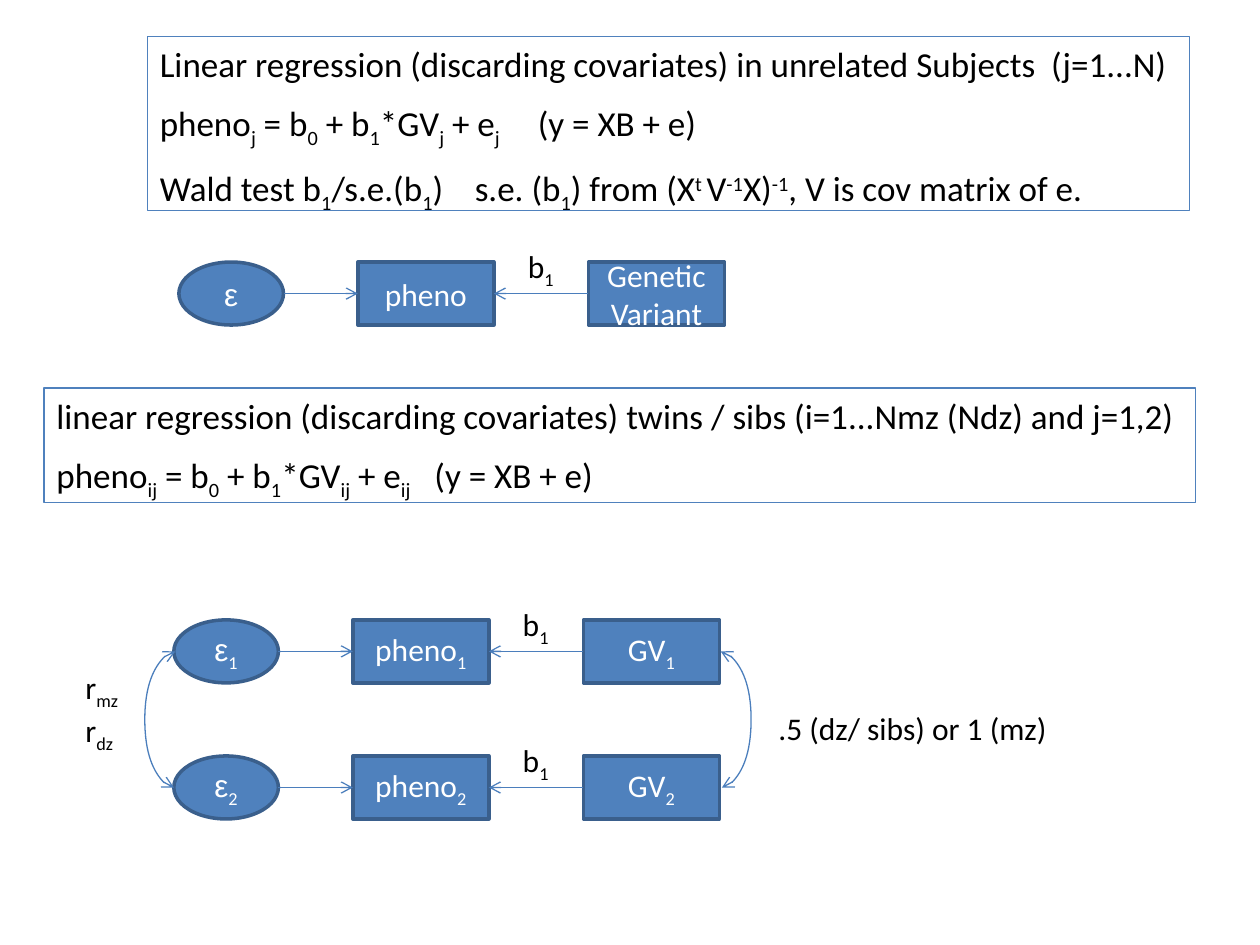
from lxml.etree import SubElement
from pptx import Presentation
from pptx.dml.color import RGBColor
from pptx.enum.shapes import MSO_CONNECTOR as Link, MSO_SHAPE as Kind
from pptx.enum.text import MSO_ANCHOR as Anchor, MSO_AUTO_SIZE as Auto, PP_ALIGN as Align
from pptx.oxml.ns import qn
from pptx.util import Inches, Pt

# {_x} is a subscript, {^x} a superscript
MODELS = [
    ((1.17, 0.29, 8.27, 1.38), [
        "Linear regression (discarding covariates) in unrelated Subjects  (j=1...N)",
        "pheno{_j} = b{_0} + b{_1}*GV{_j} + e{_j}\t(y = XB + e)",
        "Wald test b{_1}/s.e.(b{_1})\ts.e. (b{_1}) from (X{^t }V{^-1}X){^-1}, V is cov matrix of e.",
    ]),
    ((0.35, 3.08, 9.14, 0.91), [
        "linear regression (discarding covariates) twins / sibs (i=1...Nmz (Ndz) and j=1,2)",
        "pheno{_ij} = b{_0} + b{_1}*GV{_ij} + e{_ij}\t(y = XB + e)",
    ]),
]
# left, top, error, phenotype, variant
PATHS = [
    (1.42, 2.08, "ε", "pheno", "Genetic\nVariant"),
    (1.38, 4.92, "ε{_1}", "pheno{_1}", "GV{_1}"),
    (1.38, 6.0, "ε{_2}", "pheno{_2}", "GV{_2}"),
]
LABELS = [
    ((0.58, 5.25, 0.49, 0.71), "r{_mz}\nr{_dz}"),
    ((6.08, 5.58, 2.36, 0.4), ".5 (dz/ sibs) or 1 (mz)"),
]
OVAL_W, BOX_W, NODE_H = 0.83, 1.08, 0.5
PHENO_DX, GENE_DX = 1.42, 3.25
BASE = {"_": "-25000", "^": "30000"}
FILL, EDGE, ARROW = "4F81BD", "3A5F8C", "4B7EBC"

deck = Presentation()
deck.slide_width, deck.slide_height = Inches(10), Inches(7.5)
slide = deck.slides.add_slide(deck.slide_layouts[6])
shapes = slide.shapes


def rgb(code):
    return RGBColor.from_string(code)


def write(shape, lines, size=18, color="000000", align=Align.LEFT,
          anchor=Anchor.TOP, wrap=True, gap=0):
    frame = shape.text_frame
    frame.word_wrap, frame.vertical_anchor = wrap, anchor
    frame.auto_size = Auto.NONE if wrap else Auto.SHAPE_TO_FIT_TEXT
    for i, line in enumerate(lines):
        para = frame.add_paragraph() if i else frame.paragraphs[0]
        para.alignment = align
        para.space_before = Pt(gap if i else 0)
        for k, part in enumerate(line.replace("}", "{").split("{")):
            if not part:
                continue
            run = para.add_run()
            run.text = part[1:] if k % 2 else part
            run.font.size = Pt(size)
            run.font.name = "Arial" if part == "ε" else "Calibri"
            run.font.color.rgb = rgb(color)
            if k % 2:
                run._r.get_or_add_rPr().set("baseline", BASE[part[0]])


def shape(kind, place, fill, edge, width):
    item = shapes.add_shape(kind, *map(Inches, place))
    item.shadow.inherit = False
    if fill:
        item.fill.solid()
        item.fill.fore_color.rgb = rgb(fill)
    else:
        item.fill.background()
    item.line.color.rgb = rgb(edge)
    item.line.width = Pt(width)
    return item


def node(kind, x, y, width, text):
    item = shape(kind, (x, y, width, NODE_H), FILL, EDGE, 2)
    write(item, text.split("\n"), color="FFFFFF", align=Align.CENTER, anchor=Anchor.MIDDLE)


def label(place, text):
    write(shapes.add_textbox(*map(Inches, place)), text.split("\n"), wrap=False)


def arrow(x1, y1, x2, y2, kind=Link.STRAIGHT, ends=("tailEnd",)):
    item = shapes.add_connector(kind, *map(Inches, (x1, y1, x2, y2)))
    item.line.color.rgb = rgb(ARROW)
    item.line.width = Pt(0.75)
    line = item.line._get_or_add_ln()
    for end in ends:
        SubElement(line, qn("a:" + end), type="arrow")
    SubElement(item._element.spPr, qn("a:effectLst"))
    return item


def bow(x1, y1, x2, y2, turn=0):
    """Curve with two heads that swings 0.25 inch out to the side."""
    props = arrow(x1, y1, x2, y2, Link.CURVE, ("headEnd", "tailEnd"))._element.spPr
    if turn:
        props.find(qn("a:xfrm")).set("rot", str(turn * 60000))
    geom = props.find(qn("a:prstGeom"))
    guides = geom.find(qn("a:avLst"))
    if guides is None:
        guides = SubElement(geom, qn("a:avLst"))
    SubElement(guides, qn("a:gd"), name="adj1", fmla="val 2450000")


for place, lines in MODELS:
    write(shape(Kind.RECTANGLE, place, None, FILL, 0.75), lines, size=20, gap=9.8)

for x, y, error, pheno, gene in PATHS:
    left, right, mid = x + PHENO_DX, x + GENE_DX, y + NODE_H / 2
    node(Kind.RECTANGLE, left, y, BOX_W, pheno)
    node(Kind.RECTANGLE, right, y, BOX_W, gene)
    node(Kind.OVAL, x, y, OVAL_W, error)
    arrow(x + OVAL_W, mid, left, mid)
    arrow(right, mid, left + BOX_W, mid)
    label((x + 2.67, y - 0.17, 0.42, 0.4), "b{_1}")

bow(1.38, 6.25, 1.39, 5.17, turn=180)
bow(5.72, 5.17, 5.73, 6.25)
for place, text in LABELS:
    label(place, text)

deck.save("out.pptx")
